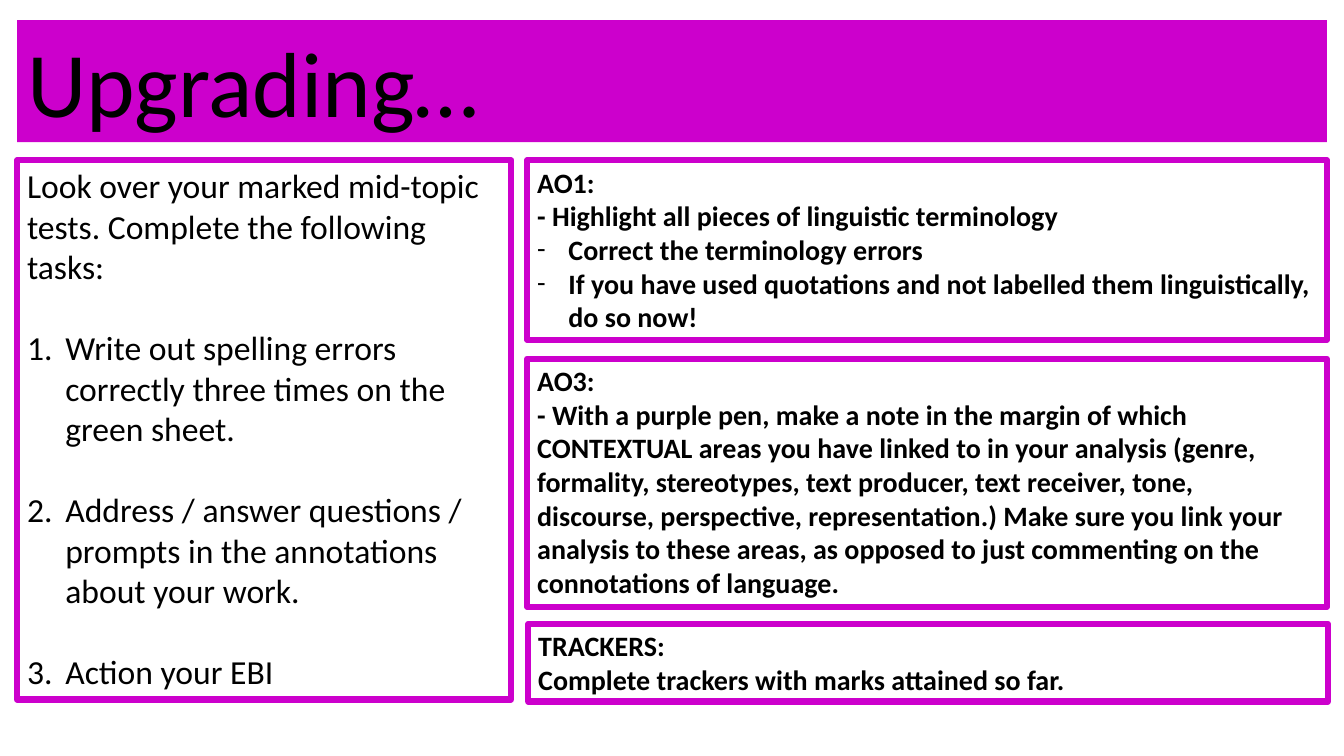
from dataclasses import dataclass

from lxml import etree
from pptx import Presentation
from pptx.dml.color import RGBColor
from pptx.enum.text import MSO_AUTO_SIZE, MSO_ANCHOR, PP_ALIGN
from pptx.oxml.ns import qn
from pptx.util import Inches, Pt

FIT_TEXT = MSO_AUTO_SIZE.SHAPE_TO_FIT_TEXT
TOP = MSO_ANCHOR.TOP
LEFT = PP_ALIGN.LEFT


@dataclass(frozen=True)
class Theme:
    """Colours, font and type sizes of the slide."""
    accent: RGBColor = RGBColor(0xCC, 0x00, 0xCC)
    ink: RGBColor = RGBColor(0x00, 0x00, 0x00)
    font: str = "Calibri"
    title_size: float = 66
    task_size: float = 24
    objective_size: float = 20
    border: float = 4.5
    task_gap: float = 29.3


class SlideBuilder:
    """Draws banners, panels and paragraphs on one slide."""

    def __init__(self, slide, theme):
        self.slide = slide
        self.theme = theme

    def box(self, left, top, width, height):
        """Add a text box with wrapped text that the box fits."""
        panel = self.slide.shapes.add_textbox(
            Inches(left), Inches(top), Inches(width), Inches(height))
        frame = panel.text_frame
        frame.word_wrap = True
        frame.auto_size = FIT_TEXT
        frame.vertical_anchor = TOP
        return panel

    def banner(self, title, *place):
        """Add the filled title bar."""
        bar = self.box(*place)
        bar.fill.solid()
        bar.fill.fore_color.rgb = self.theme.accent
        self.add_text(bar.text_frame.paragraphs[0], title, self.theme.title_size)

    def panel(self, plain, listed, place, size, bold=False, indent=0.0,
              numbered=False, gap=0.0):
        """Add an outlined panel of plain paragraphs followed by a list."""
        panel = self.box(*place)
        panel.line.color.rgb = self.theme.accent
        panel.line.width = Pt(self.theme.border)
        frame = panel.text_frame
        for index, text in enumerate(plain + listed):
            paragraph = frame.add_paragraph() if index else frame.paragraphs[0]
            self.add_text(paragraph, text, size, bold)
            if index >= len(plain):
                paragraph.space_before = Pt(gap)
                self.bullet(paragraph, indent, numbered)

    def add_text(self, paragraph, text, size, bold=False):
        """Add one styled run to a paragraph."""
        paragraph.alignment = LEFT
        run = paragraph.add_run()
        run.text = text
        run.font.name = self.theme.font
        run.font.size = Pt(size)
        run.font.bold = bold
        run.font.color.rgb = self.theme.ink

    def bullet(self, paragraph, indent, numbered):
        """Give a paragraph a hanging number or dash."""
        properties = paragraph._p.get_or_add_pPr()
        properties.set("marL", str(Inches(indent)))
        properties.set("indent", str(-Inches(indent)))
        etree.SubElement(properties, qn("a:buFont"), typeface=self.theme.font)
        if numbered:
            etree.SubElement(properties, qn("a:buAutoNum"), type="arabicPeriod")
        else:
            etree.SubElement(properties, qn("a:buChar"), char="-")


TASK_INTRO = ["Look over your marked mid-topic tests. Complete the following tasks:"]
TASKS = [
    "Write out spelling errors correctly three times on the green sheet.",
    "Address / answer questions / prompts in the annotations about your work.",
    "Action your EBI",
]
OBJECTIVES = [
    ((5.23, 1.59, 7.93, 1.78),
     ["AO1:", "- Highlight all pieces of linguistic terminology"],
     ["Correct the terminology errors",
      "If you have used quotations and not labelled them linguistically, do so now!"]),
    ((5.23, 3.56, 7.93, 2.46),
     ["AO3:",
      "- With a purple pen, make a note in the margin of which CONTEXTUAL areas "
      "you have linked to in your analysis (genre, formality, stereotypes, text "
      "producer, text receiver, tone, discourse, perspective, representation.) "
      "Make sure you link your analysis to these areas, as opposed to just "
      "commenting on the connotations of language."],
     []),
    ((5.24, 6.19, 7.93, 0.77),
     ["TRACKERS:", "Complete trackers with marks attained so far."],
     []),
]


def main():
    """Build and save the slide."""
    deck = Presentation()
    deck.slide_width = Inches(13.33)
    deck.slide_height = Inches(7.5)
    theme = Theme()
    builder = SlideBuilder(deck.slides.add_slide(deck.slide_layouts[6]), theme)

    builder.banner("Upgrading…", 0.17, 0.2, 12.99, 1.21)
    builder.panel(TASK_INTRO, TASKS, (0.17, 1.59, 4.9, 5.35), theme.task_size,
                  indent=0.38, numbered=True, gap=theme.task_gap)
    for place, plain, listed in OBJECTIVES:
        builder.panel(plain, listed, place, theme.objective_size,
                      bold=True, indent=0.31)
    deck.save("out.pptx")


if __name__ == "__main__":
    main()
